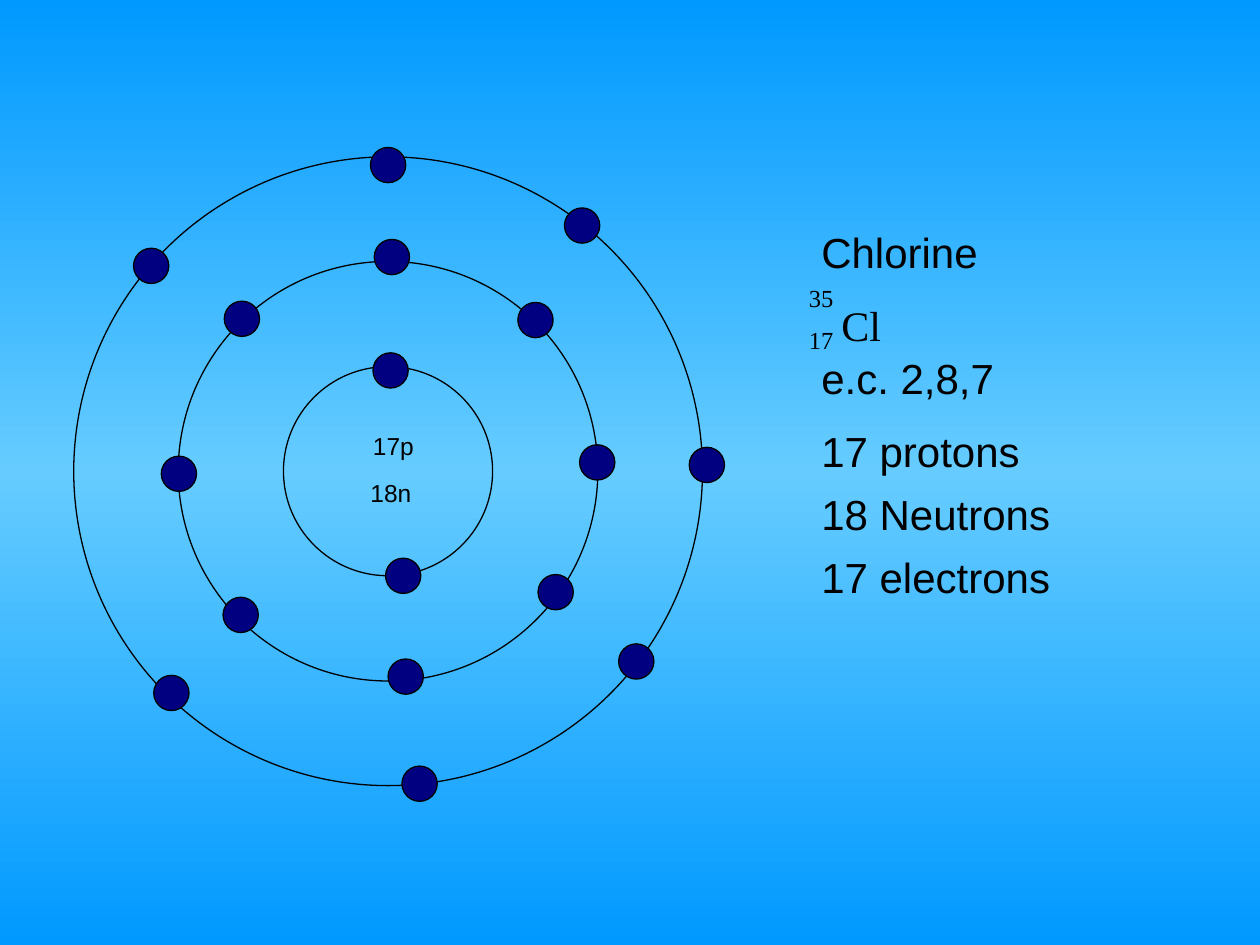
from copy import deepcopy

from pptx import Presentation
from pptx import util as u
from pptx.dml.color import RGBColor
from pptx.enum import shapes, text
from pptx.oxml.ns import qn


def rgb(value):
    return RGBColor.from_string(value)


def write(tf, content, font="Arial", size=24, color="000000", inset=0.0, wrap=True):
    tf.word_wrap = wrap
    tf.auto_size = text.MSO_AUTO_SIZE.SHAPE_TO_FIT_TEXT
    if not inset:
        tf.margin_left = tf.margin_right = tf.margin_top = tf.margin_bottom = 0
    r = tf.paragraphs[0].add_run()
    r.text = content
    r.font.name = font
    r.font.size = u.Pt(size)
    r.font.color.rgb = rgb(color)


class AtomSlide:
    serif = "Times New Roman"
    line = "000000"
    electron_fill = "000080"
    electron_size = 0.28

    def __init__(self, prs):
        self.s = prs.slides.add_slide(prs.slide_layouts[6])
        self.atom = self.s.shapes.add_group_shape()

    def background(self, edge, middle):
        fill = self.s.background.fill
        fill.gradient()
        fill.gradient_angle = 90
        stops = next(self.s.element.iter(qn("a:gsLst")))
        stops.append(deepcopy(stops[-1]))
        for stop, position, color in zip(fill.gradient_stops, (0, 0.5, 1), (edge, middle, edge)):
            stop.position = position
            stop.color.rgb = rgb(color)

    def label(self, content, left, top, width, height=0.5, inset=0.1, **style):
        box = self.s.shapes.add_textbox(*map(u.Inches, (left, top, width, height)))
        write(box.text_frame, content, inset=inset, **style)

    def small_label(self, content, left, top, width, **style):
        self.label(content, left, top, width, 0.23, inset=0, size=14, **style)

    def circle(self, left, top, size, fill=None):
        sp = self.atom.shapes.add_shape(
            shapes.MSO_SHAPE.OVAL, *map(u.Inches, (left, top, size, size)))
        sp.shadow.inherit = False
        if fill:
            sp.fill.solid()
            sp.fill.fore_color.rgb = rgb(fill)
        else:
            sp.fill.background()
        sp.line.color.rgb = rgb(self.line)
        sp.line.width = u.Pt(0.75)

    def ring(self, cx, cy, diameter):
        self.circle(cx - diameter / 2, cy - diameter / 2, diameter)

    def electron(self, left, top):
        self.circle(left, top, self.electron_size, self.electron_fill)


def main():
    prs = Presentation()
    prs.slide_width, prs.slide_height = u.Inches(10), u.Inches(7.5)
    slide = AtomSlide(prs)
    slide.background("0099FF", "66CCFF")

    # Shells
    for diameter in (1.66, 3.33, 4.99):
        slide.ring(3.08, 3.74, diameter)

    # Electrons, clockwise from the top of each shell
    electrons = {
        "inner": [(2.96, 2.8), (3.06, 4.43)],
        "middle": [(2.97, 1.9), (4.11, 2.4), (4.6, 3.53), (4.27, 4.56),
                   (3.08, 5.23), (1.77, 4.74), (1.28, 3.62), (1.78, 2.39)],
        "outer": [(2.94, 1.17), (4.48, 1.65), (5.47, 3.55), (4.91, 5.11),
                  (3.19, 6.08), (1.22, 5.36), (1.06, 1.97)],
    }
    for shell in electrons.values():
        for left, top in shell:
            slide.electron(left, top)

    # Nucleus
    slide.small_label("17p", 2.96, 3.42, 0.33)
    slide.small_label("18n", 2.94, 3.79, 0.33)

    # Element symbol with mass and atomic numbers
    slide.small_label("35", 6.42, 2.25, 0.25, font=slide.serif)
    slide.small_label("17", 6.42, 2.58, 0.25, font=slide.serif)
    slide.label("Cl", 6.58, 2.33, 0.52, font=slide.serif, wrap=False)

    # Facts about the element
    facts = [("Chlorine", 1.75), ("e.c. 2,8,7", 2.75), ("17 protons", 3.33),
             ("18 Neutrons", 3.83), ("17 electrons", 4.33)]
    for content, top in facts:
        slide.label(content, 6.42, top, 2.5)

    prs.save("out.pptx")


if __name__ == "__main__":
    main()
